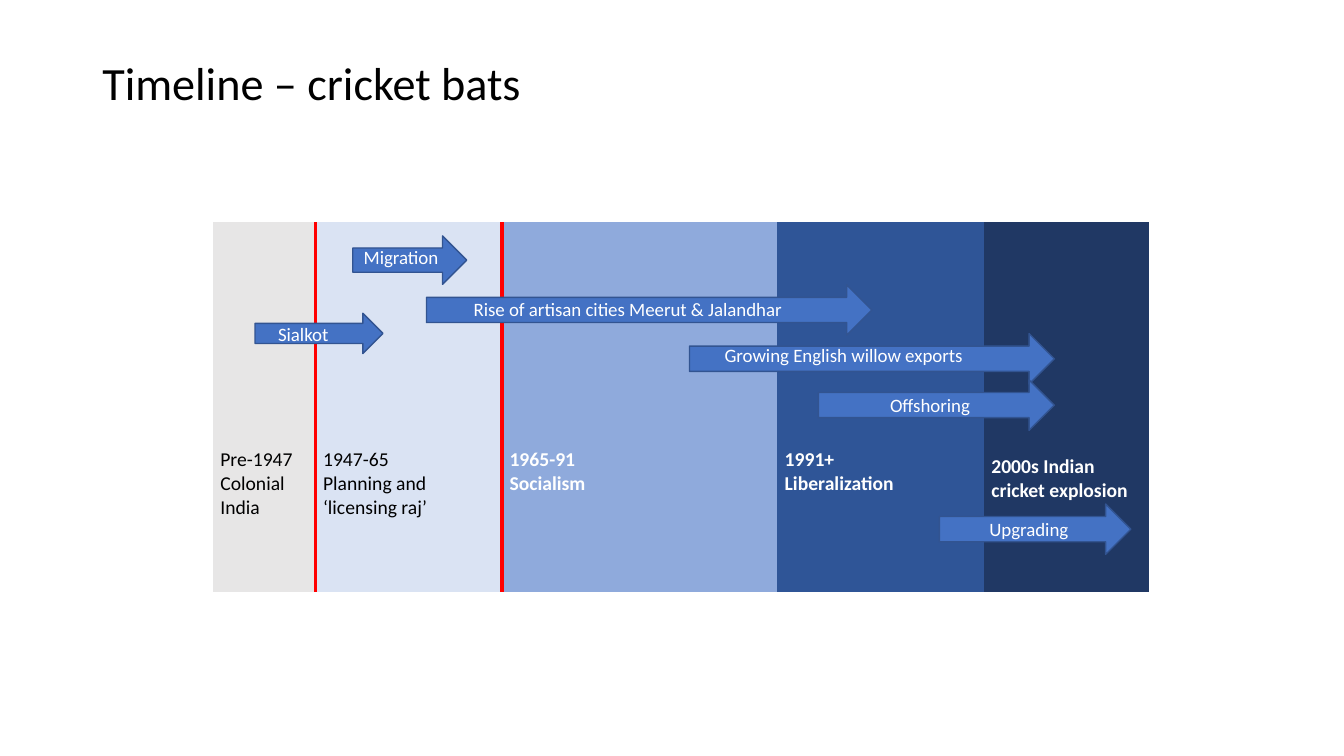
from dataclasses import dataclass

from lxml.etree import SubElement
from pptx import Presentation
from pptx.dml.color import RGBColor
from pptx.enum.shapes import MSO_SHAPE
from pptx.enum.text import MSO_ANCHOR, PP_ALIGN
from pptx.oxml import parse_xml
from pptx.oxml.ns import nsdecls, qn
from pptx.util import Pt


@dataclass(frozen=True)
class Theme:
    font: str = "Calibri"
    black: str = "000000"
    white: str = "FFFFFF"
    arrow_fill: str = "4472C4"
    arrow_line: str = "325491"
    partition: str = "FF0000"
    title_size: float = 33
    period_size: float = 14
    label_size: float = 13.5


theme = Theme()
NO_STYLE = "{2D5ABB26-0587-4C30-8999-92F81FD0307C}"


def write(frame, text, size, color, bold=False, align=PP_ALIGN.LEFT):
    frame.word_wrap = True
    frame.text = text
    for para in frame.paragraphs:
        para.alignment = align
        for span in para.runs:
            span.font.name = theme.font
            span.font.size = Pt(size)
            span.font.bold = bold
            span.font.color.rgb = RGBColor.from_string(color)


def add_border(cell, side):
    border = parse_xml(f'<a:{side} {nsdecls("a")} w="{Pt(3)}"/>')
    fill = SubElement(border, qn("a:solidFill"))
    SubElement(fill, qn("a:srgbClr"), val=theme.partition)
    cell._tc.get_or_add_tcPr().insert(0, border)


deck = Presentation()
deck.slide_width = Pt(960)
deck.slide_height = Pt(540)
page = deck.slides.add_slide(deck.slide_layouts[6])

title = page.shapes.add_textbox(Pt(66), Pt(28.8), Pt(828), Pt(64))
title.text_frame.vertical_anchor = MSO_ANCHOR.MIDDLE
write(title.text_frame, "Timeline – cricket bats", theme.title_size, theme.black)
title.text_frame.paragraphs[0].line_spacing = 0.9

periods = [
    (73.4, "Pre-1947 Colonial India", "E7E6E6", theme.black, False, 161.6),
    (133.2, "1947-65\nPlanning and ‘licensing raj’", "DAE3F3", theme.black, False, 161.6),
    (196.6, "1965-91\nSocialism", "8FAADC", theme.white, True, 161.6),
    (147.6, "1991+\nLiberalization", "2F5597", theme.white, True, 161.6),
    (117.8, "2000s Indian cricket explosion", "203864", theme.white, True, 166.5),
]
table_width = sum(period[0] for period in periods)
table_frame = page.shapes.add_table(
    1, len(periods), Pt(152), Pt(158.6), Pt(table_width), Pt(264.2))
table = table_frame.table
table.first_row = False
table.horz_banding = False
table._tbl.tblPr.find(qn("a:tableStyleId")).text = NO_STYLE
table.rows[0].height = Pt(264.2)
for column, (width, text, fill, color, bold, margin_top) in enumerate(periods):
    table.columns[column].width = Pt(width)
    cell = table.cell(0, column)
    cell.margin_left = cell.margin_right = Pt(5.4)
    cell.margin_top = Pt(margin_top)
    cell.margin_bottom = Pt(2.7)
    cell.fill.solid()
    cell.fill.fore_color.rgb = RGBColor.from_string(fill)
    write(cell.text_frame, text, theme.period_size, color, bold)
add_border(table.cell(0, 0), "lnR")
add_border(table.cell(0, 1), "lnL")

arrows = [
    ("Migration", (252, 168.5, 81.4, 34.6), (252.7, 172.1, 71.3)),
    ("Rise of artisan cities Meerut & Jalandhar", (304.6, 203.4, 318.2, 36), (331.2, 208.8, 248.4)),
    ("Growing English willow exports", (492.5, 238.3, 260.6, 36), (510.5, 242, 225.4)),
    ("Sialkot", (182.2, 223.8, 91.4, 28.8), (191.5, 226.6, 70.6)),
    ("Offshoring", (584.6, 271.4, 168.5, 36), None),
    ("Upgrading", (671, 360, 136.8, 36), None),
]
for text, arrow_place, label_place in arrows:
    arrow = page.shapes.add_shape(MSO_SHAPE.RIGHT_ARROW, *map(Pt, arrow_place))
    arrow.shadow.inherit = False
    arrow.fill.solid()
    arrow.fill.fore_color.rgb = RGBColor.from_string(theme.arrow_fill)
    arrow.line.color.rgb = RGBColor.from_string(theme.arrow_line)
    arrow.line.width = Pt(1)
    if label_place:
        label = page.shapes.add_textbox(*map(Pt, label_place), Pt(23.8))
        write(label.text_frame, text, theme.label_size, theme.white)
    else:
        arrow.text_frame.vertical_anchor = MSO_ANCHOR.MIDDLE
        write(arrow.text_frame, text, theme.label_size, theme.white, align=PP_ALIGN.CENTER)

deck.save("out.pptx")
